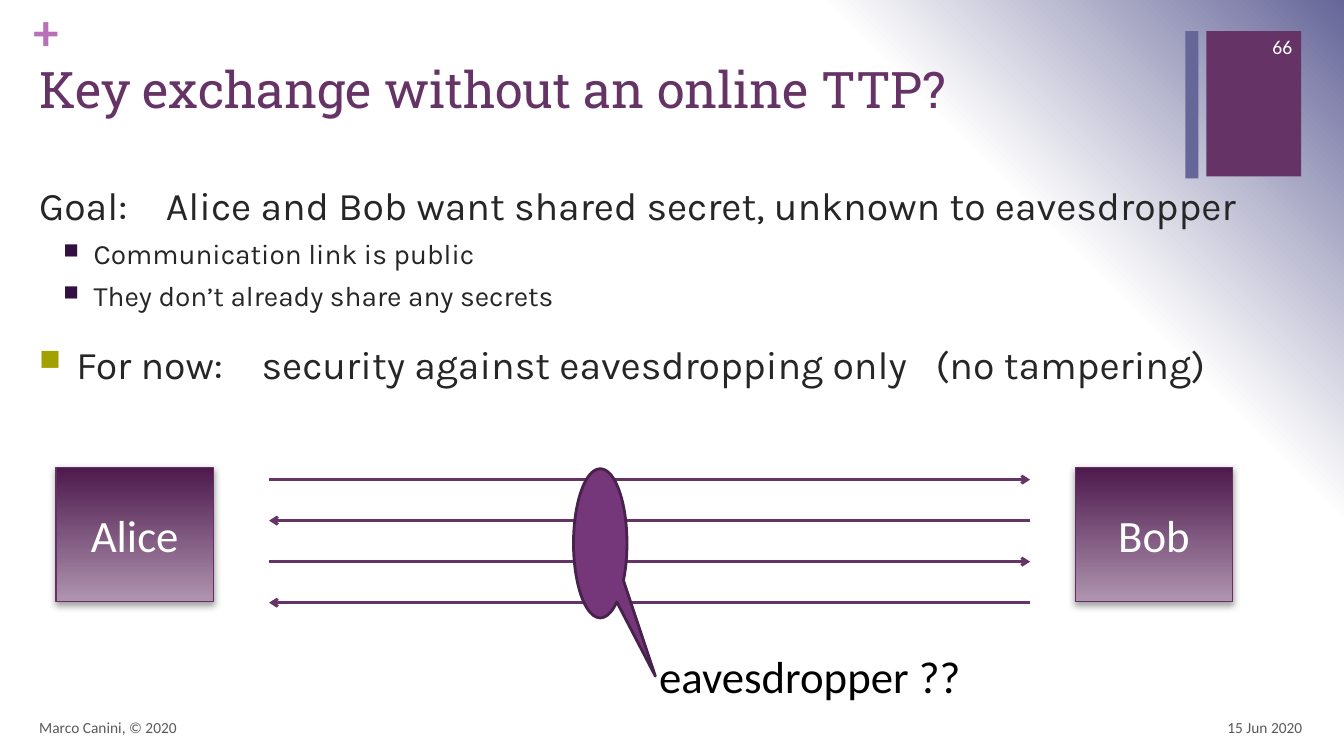
from dataclasses import dataclass

from lxml.etree import SubElement
from pptx import Presentation
from pptx.dml.color import RGBColor
from pptx.enum.shapes import MSO_CONNECTOR, MSO_SHAPE
from pptx.enum.text import MSO_ANCHOR as Anchor, PP_ALIGN as Align
from pptx.oxml import parse_xml
from pptx.oxml.ns import nsdecls, qn
from pptx.shapes.autoshape import Shape
from pptx.slide import Slide
from pptx.util import Pt

PURPLE = RGBColor(0x66, 0x33, 0x66)
SLATE = RGBColor(0x66, 0x66, 0x99)
ORCHID = RGBColor(0xB8, 0x70, 0xB8)
PARTY_TOP = RGBColor(0x4D, 0x1A, 0x4D)
PARTY_BOTTOM = RGBColor(0xAF, 0x94, 0xAF)
PARTY_EDGE = RGBColor(0x65, 0x31, 0x65)
SHADOW_GRAY = RGBColor(0x80, 0x80, 0x80)
TAP_FILL = RGBColor(0x75, 0x36, 0x7A)
TAP_EDGE = RGBColor(0x48, 0x22, 0x4C)
INK = RGBColor(0x26, 0x26, 0x26)
FOOTER_GRAY = RGBColor(0x59, 0x59, 0x59)
DARK_BULLET = RGBColor(0x33, 0x0F, 0x42)
OLIVE_BULLET = RGBColor(0xA3, 0xA1, 0x01)
WHITE = RGBColor(0xFF, 0xFF, 0xFF)
BLACK = RGBColor(0, 0, 0)

HEADING_FONT = "Roboto Slab"
BODY_FONT = "Karla"
LABEL_FONT = "Calibri"


@dataclass(frozen=True)
class Box:
    left: float
    top: float
    width: float
    height: float

    def lengths(self) -> tuple[Pt, Pt, Pt, Pt]:
        return Pt(self.left), Pt(self.top), Pt(self.width), Pt(self.height)


@dataclass(frozen=True)
class Label:
    text: str
    box: Box
    size: float
    color: RGBColor
    font: str = LABEL_FONT
    bold: bool = False
    align: Align = Align.LEFT
    anchor: Anchor = Anchor.MIDDLE
    wrap: bool = True
    inset: bool = True


@dataclass(frozen=True)
class Gap:
    extra: float


@dataclass(frozen=True)
class Point:
    pieces: tuple[str | Gap, ...]
    size: float
    before: float
    left: float = 0
    hanging: float = 0
    level: int = 0
    bullet: RGBColor | None = None


@dataclass(frozen=True)
class Party:
    name: str
    left: float


BARS = (
    (Box(861.8, 22.3, 67.7, 103.7), PURPLE),
    (Box(846.7, 22.3, 9.4, 105.1), SLATE),
)
LABELS = (
    Label("+", Box(23.8, 0, 27.4, 43.9), 36, ORCHID, bold=True,
          anchor=Anchor.TOP, inset=False),
    Label("Key exchange without an online TTP?", Box(20.9, 38.2, 824.4, 87.8),
          36, PURPLE, HEADING_FONT, anchor=Anchor.TOP),
    Label("eavesdropper ??", Box(463.7, 460, 231.8, 46), 32, BLACK,
          anchor=Anchor.TOP, wrap=False),
    Label("15 Jun 2020", Box(713.5, 505.4, 223.9, 28.8), 11, FOOTER_GRAY,
          align=Align.RIGHT),
    Label("Marco Canini, © 2020", Box(20.9, 505.4, 643, 28.8), 11, FOOTER_GRAY),
    Label("66", Box(871.9, 18.7, 58.3, 28.8), 14, WHITE, align=Align.RIGHT),
)
BODY_BOX = Box(20.9, 126, 916.6, 379.4)
POINTS = (
    Point(("Goal:", Gap(21),
           "Alice and Bob want shared secret, unknown to eavesdropper"), 28, 20),
    Point(("Communication link is public",), 20, 6, 38.9, 21.6, 1, DARK_BULLET),
    Point(("They don’t already share any secrets",), 20, 6, 38.9, 21.6, 1,
          DARK_BULLET),
    Point(("For now:", Gap(21), "security against eavesdropping only", Gap(14),
           "(no tampering)"), 28, 20, 26.6, 26.6, 0, OLIVE_BULLET),
)
PARTIES = (Party("Alice", 40.1), Party("Bob", 768.2))
MESSAGE_COUNT = 4
MESSAGE_LEFT, MESSAGE_RIGHT = 192.2, 735.8
MESSAGE_TOP, MESSAGE_STEP = 342.6, 29.3
TAP_BOX = Box(409.7, 334.8, 38.2, 106.6)


def style_run(run, size: float, font: str, color: RGBColor, bold: bool = False) -> None:
    run.font.size = Pt(size)
    run.font.name = font
    run.font.color.rgb = color
    run.font.bold = bold


def set_background(slide: Slide) -> None:
    slide.background.fill.solid()
    solid = next(slide.element.iter(qn("a:solidFill")))
    stops = "".join(
        f'<a:gs pos="{position * 1000}"><a:srgbClr val="{color}"/></a:gs>'
        for position, color in ((0, WHITE), (75, WHITE), (100, SLATE)))
    solid.getparent().replace(solid, parse_xml(
        f'<a:gradFill {nsdecls("a")} rotWithShape="1"><a:gsLst>{stops}</a:gsLst>'
        '<a:path path="circle"><a:fillToRect t="100000" r="100000"/></a:path>'
        '</a:gradFill>'))


def add_figure(slide: Slide, preset: MSO_SHAPE, box: Box) -> Shape:
    figure = slide.shapes.add_shape(preset, *box.lengths())
    figure.shadow.inherit = False
    return figure


def add_bar(slide: Slide, box: Box, color: RGBColor) -> None:
    bar = add_figure(slide, MSO_SHAPE.RECTANGLE, box)
    bar.fill.solid()
    bar.fill.fore_color.rgb = color
    bar.line.fill.background()


def add_label(slide: Slide, label: Label) -> None:
    frame = slide.shapes.add_textbox(*label.box.lengths()).text_frame
    frame.word_wrap = label.wrap
    frame.vertical_anchor = label.anchor
    if not label.inset:
        frame.margin_left = frame.margin_right = Pt(0)
        frame.margin_top = frame.margin_bottom = Pt(0)
    frame.text = label.text
    paragraph = frame.paragraphs[0]
    paragraph.alignment = label.align
    style_run(paragraph.runs[0], label.size, label.font, label.color, label.bold)


def add_body(slide: Slide) -> None:
    frame = slide.shapes.add_textbox(*BODY_BOX.lengths()).text_frame
    frame.word_wrap = True
    for index, point in enumerate(POINTS):
        paragraph = frame.add_paragraph() if index else frame.paragraphs[0]
        paragraph.level = point.level
        paragraph.space_before = Pt(point.before)
        for piece in point.pieces:
            run = paragraph.add_run()
            run.text = " " if isinstance(piece, Gap) else piece
            style_run(run, point.size, BODY_FONT, INK)
            if isinstance(piece, Gap):
                run.font._element.set("spc", str(piece.extra * 100))
        properties = paragraph._p.get_or_add_pPr()
        properties.set("marL", str(Pt(point.left)))
        properties.set("indent", str(-Pt(point.hanging)))
        if point.bullet is not None:
            bullet_color = SubElement(properties, qn("a:buClr"))
            SubElement(bullet_color, qn("a:srgbClr"), val=str(point.bullet))
            SubElement(properties, qn("a:buSzPct"), val="75000")
            SubElement(properties, qn("a:buChar"), char="■")


def add_party(slide: Slide, party: Party) -> None:
    square = add_figure(slide, MSO_SHAPE.RECTANGLE, Box(party.left, 334.1, 112.3, 95.8))
    square.fill.gradient()
    square.fill.gradient_angle = 270
    for stop, color in zip(square.fill.gradient_stops, (PARTY_TOP, PARTY_BOTTOM)):
        stop.color.rgb = color
    square.line.color.rgb = PARTY_EDGE
    square.line.width = Pt(1)
    effects = square._element.spPr.find(qn("a:effectLst"))
    shadow = SubElement(effects, qn("a:outerShdw"), blurRad=str(Pt(5)),
                        dist=str(Pt(2)), dir="5400000", rotWithShape="0")
    tint = SubElement(shadow, qn("a:srgbClr"), val=str(SHADOW_GRAY))
    SubElement(tint, qn("a:alpha"), val="75000")
    square.text_frame.text = party.name
    square.text_frame.vertical_anchor = Anchor.MIDDLE
    paragraph = square.text_frame.paragraphs[0]
    paragraph.alignment = Align.CENTER
    style_run(paragraph.runs[0], 32, LABEL_FONT, WHITE)


def add_message(slide: Slide, index: int) -> None:
    height = Pt(MESSAGE_TOP + index * MESSAGE_STEP)
    start, end = MESSAGE_LEFT, MESSAGE_RIGHT
    if index % 2:
        start, end = end, start
    message = slide.shapes.add_connector(
        MSO_CONNECTOR.STRAIGHT, Pt(start), height, Pt(end), height)
    message.line.color.rgb = PURPLE
    message.line.width = Pt(2)
    SubElement(message.line._get_or_add_ln(), qn("a:tailEnd"), type="arrow")
    SubElement(message._element.spPr, qn("a:effectLst"))


def add_tap(slide: Slide) -> None:
    tap = add_figure(slide, MSO_SHAPE.OVAL_CALLOUT, TAP_BOX)
    tap.adjustments[0], tap.adjustments[1] = 1.03, 0.89
    tap.fill.solid()
    tap.fill.fore_color.rgb = TAP_FILL
    tap.line.color.rgb = TAP_EDGE
    tap.line.width = Pt(2)


def main() -> None:
    deck = Presentation()
    deck.slide_width, deck.slide_height = Pt(960), Pt(540)
    slide = deck.slides.add_slide(deck.slide_layouts[6])
    set_background(slide)
    for box, color in BARS:
        add_bar(slide, box, color)
    add_body(slide)
    for party in PARTIES:
        add_party(slide, party)
    for index in range(MESSAGE_COUNT):
        add_message(slide, index)
    for label in LABELS:
        add_label(slide, label)
    add_tap(slide)
    deck.save("out.pptx")


if __name__ == "__main__":
    main()
